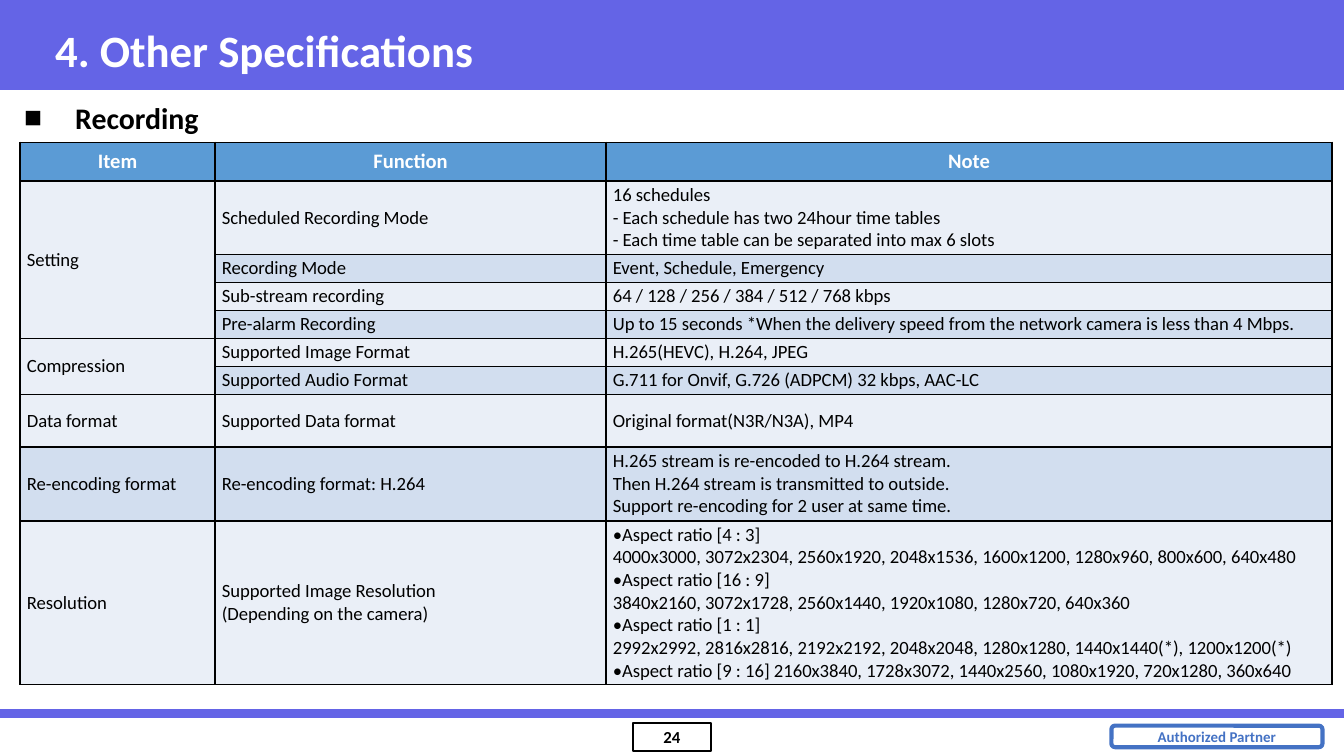
from dataclasses import dataclass

from lxml.etree import SubElement
from pptx import Presentation
from pptx.dml.color import RGBColor
from pptx.enum.shapes import MSO_CONNECTOR, MSO_SHAPE
from pptx.enum.text import MSO_ANCHOR as ANCHOR, MSO_AUTO_SIZE, PP_ALIGN as ALIGN
from pptx.oxml.ns import qn
from pptx.util import Inches, Pt

FONT = "Calibri"
BLACK = RGBColor(0x00, 0x00, 0x00)
WHITE = RGBColor(0xFF, 0xFF, 0xFF)
VIOLET = RGBColor(0x64, 0x64, 0xE6)
BLUE = RGBColor(0x44, 0x72, 0xC4)
HEADER = RGBColor(0x5B, 0x9B, 0xD5)
LIGHT = RGBColor(0xEA, 0xEF, 0xF7)
DARK = RGBColor(0xD2, 0xDE, 0xEF)


@dataclass
class Spec:
    function: str
    note: str
    height: float
    fill: RGBColor


@dataclass
class Group:
    item: str
    specs: list[Spec]


HEADINGS = ("Item", "Function", "Note")
HEADER_HEIGHT = 0.25
TABLE_HEIGHT = 4.01  # rows grow to fit their text
COL_WIDTHS = (1.45, 2.91, 5.4)
GROUPS = [
    Group("Setting", [
        Spec("Scheduled Recording Mode",
             "16 schedules\n"
             "- Each schedule has two 24hour time tables\n"
             "- Each time table can be separated into max 6 slots", 0.52, LIGHT),
        Spec("Recording Mode", "Event, Schedule, Emergency", 0.2, DARK),
        Spec("Sub-stream recording", "64 / 128 / 256 / 384 / 512 / 768 kbps", 0.18, LIGHT),
        Spec("Pre-alarm Recording",
             "Up to 15 seconds *When the delivery speed from the network camera "
             "is less than 4 Mbps.", 0.18, DARK),
    ]),
    Group("Compression", [
        Spec("Supported Image Format", "H.265(HEVC), H.264, JPEG", 0.2, LIGHT),
        Spec("Supported Audio Format",
             "G.711 for Onvif, G.726 (ADPCM) 32 kbps, AAC-LC", 0.2, DARK),
    ]),
    Group("Data format", [
        Spec("Supported Data format", "Original format(N3R/N3A), MP4", 0.39, LIGHT),
    ]),
    Group("Re-encoding format", [
        Spec("Re-encoding format: H.264",
             "H.265 stream is re-encoded to H.264 stream.\n"
             "Then H.264 stream is transmitted to outside.\n"
             "Support re-encoding for 2 user at same time.", 0.55, DARK),
    ]),
    Group("Resolution", [
        Spec("Supported Image Resolution\n(Depending on the camera)",
             "•Aspect ratio [4 : 3]\n"
             "4000x3000, 3072x2304, 2560x1920, 2048x1536, 1600x1200, 1280x960, "
             "800x600, 640x480\n"
             "•Aspect ratio [16 : 9]\n"
             "3840x2160, 3072x1728, 2560x1440, 1920x1080, 1280x720, 640x360\n"
             "•Aspect ratio [1 : 1]\n"
             "2992x2992, 2816x2816, 2192x2192, 2048x2048, 1280x1280, "
             "1440x1440(*), 1200x1200(*)\n"
             "•Aspect ratio [9 : 16] 2160x3840, 1728x3072, 1440x2560, 1080x1920, "
             "720x1280, 360x640", 1.04, LIGHT),
    ]),
]


def write(tf, text: str, *, size: float, color=BLACK, bold=False, align=ALIGN.LEFT,
          bullet=None, indent=0.0) -> None:
    """Fill a text frame, one paragraph for each line of text."""
    for i, line in enumerate(text.split("\n")):
        p = tf.paragraphs[0] if i == 0 else tf.add_paragraph()
        p.alignment = align
        p.space_before = Pt(0)
        if bullet:
            pPr = p._p.get_or_add_pPr()
            pPr.set("marL", str(Inches(indent)))
            pPr.set("indent", str(-Inches(indent)))
            SubElement(pPr, qn("a:buFont")).set("typeface", "Arial")
            SubElement(pPr, qn("a:buChar")).set("char", bullet)
        r = p.add_run()
        r.text = line
        r.font.name, r.font.size, r.font.bold = FONT, Pt(size), bold
        r.font.color.rgb = color


def place(sp, x: float, y: float, w: float, h: float, anchor) -> None:
    """Move a placeholder and set how its text sits."""
    sp.left, sp.top, sp.width, sp.height = map(Inches, (x, y, w, h))
    tf = sp.text_frame
    tf.word_wrap = True
    tf.auto_size = MSO_AUTO_SIZE.NONE
    tf.vertical_anchor = anchor


def add_box(s, kind, x: float, y: float, w: float, h: float, *,
            fill=None, line=None, line_width=1.0):
    sp = s.shapes.add_shape(kind, *map(Inches, (x, y, w, h)))
    sp.shadow.inherit = False
    if fill is None:
        sp.fill.background()
    else:
        sp.fill.solid()
        sp.fill.fore_color.rgb = fill
    if line is None:
        sp.line.fill.background()
    else:
        sp.line.color.rgb = line
        sp.line.width = Pt(line_width)
    tf = sp.text_frame
    tf.vertical_anchor = ANCHOR.MIDDLE
    tf.margin_left = tf.margin_right = tf.margin_top = tf.margin_bottom = Inches(0.03)
    return sp


def add_rule(s, y: float) -> None:
    rule = s.shapes.add_connector(MSO_CONNECTOR.STRAIGHT, 0, Inches(y), Inches(10), Inches(y))
    rule.line.color.rgb = VIOLET
    rule.line.width = Pt(4.5)
    SubElement(rule._element.spPr, qn("a:effectLst"))


def style_cell(cell, fill: RGBColor, margin_x: float, margin_y: float) -> None:
    tcPr = cell._tc.get_or_add_tcPr()
    for side in ("lnL", "lnR", "lnT", "lnB"):
        ln = SubElement(tcPr, qn(f"a:{side}"), w=str(Pt(1)))
        color = SubElement(SubElement(ln, qn("a:solidFill")), qn("a:srgbClr"))
        color.set("val", str(BLACK))
    cell.fill.solid()
    cell.fill.fore_color.rgb = fill
    cell.vertical_anchor = ANCHOR.MIDDLE
    cell.margin_left = cell.margin_right = Inches(margin_x)
    cell.margin_top = cell.margin_bottom = Inches(margin_y)


def add_spec_table(s, x: float, y: float) -> None:
    specs = [spec for group in GROUPS for spec in group.specs]
    heights = [HEADER_HEIGHT] + [spec.height for spec in specs]
    frame = s.shapes.add_table(len(heights), len(COL_WIDTHS), Inches(x), Inches(y),
                               Inches(sum(COL_WIDTHS)), Inches(TABLE_HEIGHT))
    table = frame.table
    table.horz_banding = False
    for col, width in zip(table.columns, COL_WIDTHS):
        col.width = Inches(width)
    for row, height in zip(table.rows, heights):
        row.height = Inches(height)
    frame.height = Inches(TABLE_HEIGHT)

    for c, heading in enumerate(HEADINGS):
        cell = table.cell(0, c)
        style_cell(cell, HEADER, 0.1, 0.05)
        write(cell.text_frame, heading, size=11, color=WHITE, bold=True, align=ALIGN.CENTER)

    top = 1
    for group in GROUPS:
        for r, spec in enumerate(group.specs, top):
            item = group.item if r == top else ""
            for c, text in enumerate((item, spec.function, spec.note)):
                cell = table.cell(r, c)
                style_cell(cell, spec.fill if c else group.specs[0].fill, 0.05, 0.02)
                write(cell.text_frame, text, size=10)
        bottom = top + len(group.specs) - 1
        if bottom > top:
            table.cell(top, 0).merge(table.cell(bottom, 0))
        top = bottom + 1


def main() -> None:
    prs = Presentation()
    prs.slide_width = Inches(10)
    prs.slide_height = prs.slide_width * 9 // 16
    s = prs.slides.add_slide(prs.slide_layouts[1])
    title, body = s.shapes.title, s.placeholders[1]

    band = add_box(s, MSO_SHAPE.RECTANGLE, 0, 0, 10, 0.67, fill=VIOLET)
    title._element.addprevious(band._element)  # behind the title

    page = add_box(s, MSO_SHAPE.RECTANGLE, 4.71, 5.38, 0.58, 0.21, line=BLACK)
    write(page.text_frame, "24", size=9, bold=True, align=ALIGN.CENTER)
    add_rule(s, 5.31)
    badge = add_box(s, MSO_SHAPE.ROUNDED_RECTANGLE, 8.27, 5.4, 1.57, 0.16,
                    line=BLUE, line_width=2.25)
    badge.text_frame.word_wrap = False
    write(badge.text_frame, "Authorized Partner", size=8, color=BLUE, bold=True,
          align=ALIGN.CENTER)

    place(title, 0.31, 0.08, 9.26, 0.58, ANCHOR.MIDDLE)
    write(title.text_frame, "4. Other Specifications", size=24, color=WHITE, bold=True)
    place(body, 0.08, 0.62, 3.78, 0.44, ANCHOR.BOTTOM)
    write(body.text_frame, "Recording", size=16, bold=True, bullet="■", indent=0.38)
    add_spec_table(s, 0.15, 1.06)

    prs.save("out.pptx")


if __name__ == "__main__":
    main()
